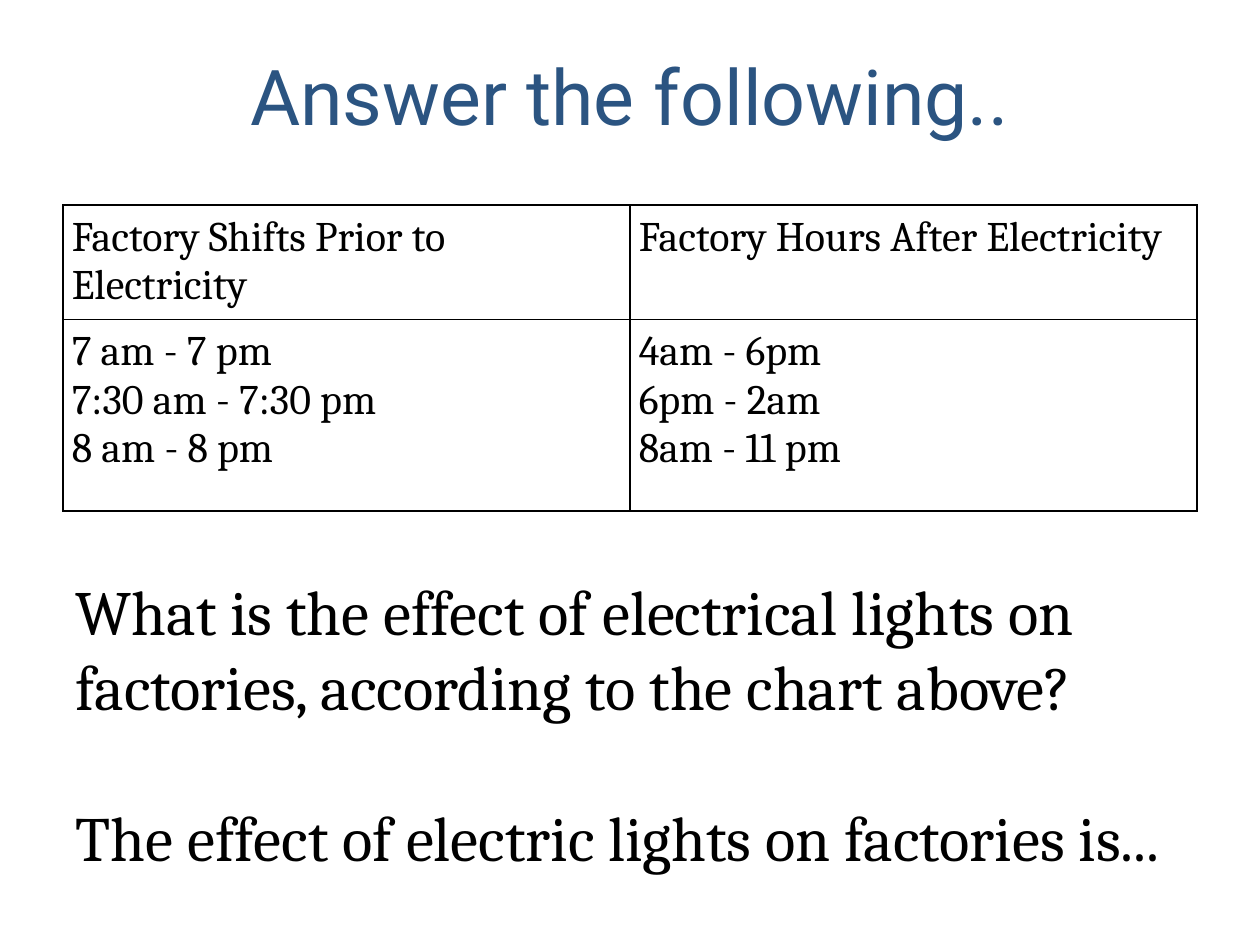
from dataclasses import dataclass

from lxml import etree
from pptx import Presentation
from pptx import util as u
from pptx.dml.color import RGBColor
from pptx.enum import text
from pptx.oxml import ns

COLORS = {"title": "2B5481", "ink": "000000"}
SERIF = "Cambria"
WIDTH, HEIGHT = u.Inches(10), u.Inches(7.5)
MARGIN = 0.05  # share of the slide's width


@dataclass
class Area:
    """A rectangle in shares of the slide's size."""
    top: float
    height: float
    left: float = MARGIN
    width: float = 1 - 2 * MARGIN

    def lengths(self) -> tuple[int, int, int, int]:
        return (round(self.left * WIDTH), round(self.top * HEIGHT),
                round(self.width * WIDTH), round(self.height * HEIGHT))


@dataclass
class Column:
    heading: str
    shifts: list[str]


COLUMNS = [
    Column("Factory Shifts Prior to Electricity",
           ["7 am - 7 pm", "7:30 am - 7:30 pm", "8 am - 8 pm"]),
    Column("Factory Hours After Electricity",
           ["4am - 6pm", "6pm - 2am", "8am - 11 pm"]),
]
ROW_HEIGHTS = [0.9, 1.52]  # inches
QUESTIONS = [
    "What is the effect of electrical lights on factories, "
    "according to the chart above?",
    "The effect of electric lights on factories is...",
]


def write(frame, lines: list[str], *, size: float, font: str = SERIF,
          color: str = "ink", align=text.PP_ALIGN.LEFT, gap: float = 0) -> None:
    """Fill a text frame, one paragraph a line, with a gap between them."""
    for index, line in enumerate(lines):
        para = frame.add_paragraph() if index else frame.paragraphs[0]
        para.alignment = align
        para.line_spacing = 1.0
        para.space_before = u.Pt(gap if index else 0)
        para.space_after = u.Pt(0)
        span = para.add_run()
        span.text = line
        span.font.size = u.Pt(size)
        span.font.name = font
        span.font.color.rgb = RGBColor.from_string(COLORS[color])


def place(box, area: Area) -> None:
    """Move a placeholder and centre its text vertically."""
    box.left, box.top, box.width, box.height = area.lengths()
    box.text_frame.word_wrap = True
    box.text_frame.auto_size = text.MSO_AUTO_SIZE.NONE
    box.text_frame.vertical_anchor = text.MSO_ANCHOR.MIDDLE


def remove_bullets(frame) -> None:
    for para in frame.paragraphs:
        properties = para._p.get_or_add_pPr()
        properties.set("marL", "0")
        properties.set("indent", "0")
        etree.SubElement(properties, ns.qn("a:buNone"))


def add_borders(cell, color: str, width: float) -> None:
    properties = cell._tc.get_or_add_tcPr()
    for index, side in enumerate(("lnL", "lnR", "lnT", "lnB")):
        line = etree.Element(ns.qn(f"a:{side}"), w=str(u.Pt(width)))
        fill = etree.SubElement(line, ns.qn("a:solidFill"))
        etree.SubElement(fill, ns.qn("a:srgbClr"), val=COLORS[color])
        properties.insert(index, line)


def add_shift_table(page, area: Area) -> None:
    table = page.shapes.add_table(
        len(ROW_HEIGHTS), len(COLUMNS), *area.lengths()).table
    table.first_row = table.horz_banding = False
    for row, height in zip(table.rows, ROW_HEIGHTS):
        row.height = u.Inches(height)
    for number, column in enumerate(COLUMNS):
        for row, lines in enumerate(([column.heading], column.shifts)):
            cell = table.cell(row, number)
            cell.fill.background()
            cell.margin_left = cell.margin_right = u.Inches(0.07)
            cell.margin_top = cell.margin_bottom = u.Inches(0.07)
            write(cell.text_frame, lines, size=24)
            add_borders(cell, "ink", 1)


def main() -> None:
    deck = Presentation()
    deck.slide_width, deck.slide_height = WIDTH, HEIGHT
    page = deck.slides.add_slide(deck.slide_layouts[1])
    title, body = page.placeholders

    # Title
    place(title, Area(top=0, height=0.2))
    write(title.text_frame, ["Answer the following.."], size=44,
          font="Roboto", color="title", align=text.PP_ALIGN.CENTER)

    # Shifts before and after electricity
    add_shift_table(page, Area(top=0.217, height=sum(ROW_HEIGHTS) / 7.5))

    # Question and sentence starter, below the table
    place(body, Area(top=0.5, height=0.437))
    frame = body.text_frame
    frame.margin_left = frame.margin_right = frame.margin_bottom = u.Inches(0.1)
    frame.margin_top = u.Inches(0.8)
    write(frame, QUESTIONS, size=36, gap=43)
    remove_bullets(frame)

    deck.save("out.pptx")


if __name__ == "__main__":
    main()
